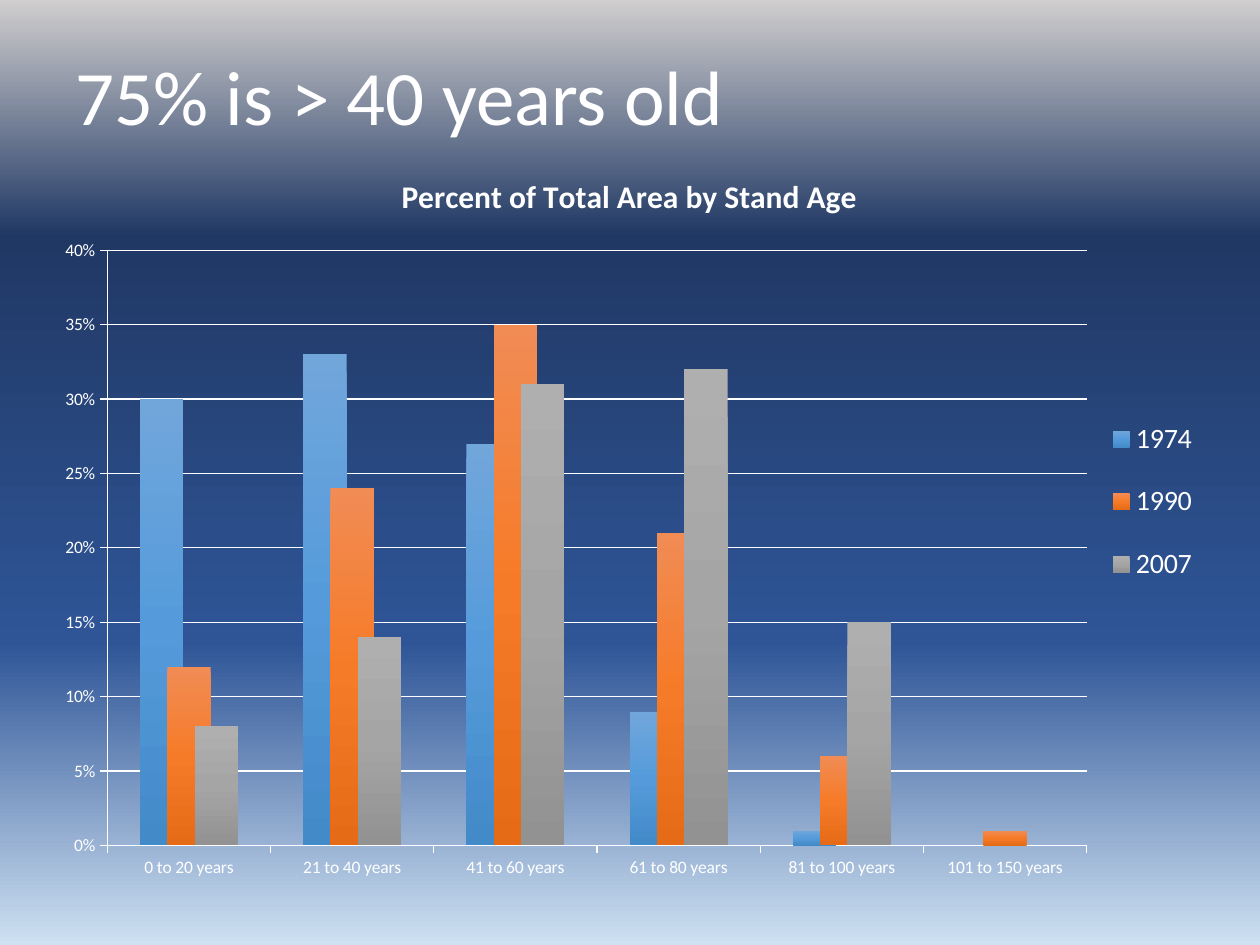
import pptx
import pptx.util
import pptx.chart.data
import pptx.dml.color
import pptx.enum.chart
import pptx.enum.text
from pptx.oxml.ns import qn
from lxml import etree

Inches, Pt = pptx.util.Inches, pptx.util.Pt
FONT = "Calibri"
HEX = {"white": "FFFFFF"}
SKY = [(0, "D0CECE"), (25, "203864"), (68, "2F5597"), (100, "CEE1F2")]
AGES = ["0 to 20 years", "21 to 40 years", "41 to 60 years",
        "61 to 80 years", "81 to 100 years", "101 to 150 years"]
YEARS = {
    "1974": ([0.3, 0.33, 0.27, 0.09, 0.01, None],
             [(0, "71A6DB"), (50, "559BDB"), (100, "438AC9")]),
    "1990": ([0.12, 0.24, 0.35, 0.21, 0.06, 0.01],
             [(0, "F18C55"), (50, "F67B28"), (100, "E56B17")]),
    "2007": ([0.08, 0.14, 0.31, 0.32, 0.15, 0],
             [(0, "AFAFAF"), (50, "A5A5A5"), (100, "929292")]),
}


def style(font, size, bold=False, color="white"):
    font.name, font.size, font.bold = FONT, Pt(size), bold
    font.color.rgb = pptx.dml.color.RGBColor.from_string(HEX[color])


def put(frame, text, size, bold=False, align=None, space=None):
    par = frame.paragraphs[0]
    par.alignment, par.line_spacing = align, space
    run = par.add_run()
    run.text = text
    style(run.font, size, bold)


def grade(fill, root, stops):
    """Fill from top to bottom with (percent, hex) stops."""
    fill.gradient()
    fill.gradient_angle = 270
    group = next(root.iter(qn("a:gsLst")))
    for old in list(group):
        group.remove(old)
    for pos, color in stops:
        stop = etree.SubElement(group, qn("a:gs"), pos=str(pos * 1000))
        etree.SubElement(stop, qn("a:srgbClr"), val=color)


def lay(part, box, inner=False):
    """Place a chart part by fractions of the chart's size."""
    node = part.find(qn("c:layout"))
    if node is None:
        node = etree.Element(qn("c:layout"))
        if inner:
            part.insert(0, node)
        else:
            part.find(qn("c:legendPos")).addnext(node)
    for old in list(node):
        node.remove(old)
    manual = etree.SubElement(node, qn("c:manualLayout"))
    if inner:
        etree.SubElement(manual, qn("c:layoutTarget"), val="inner")
    for key in ("xMode", "yMode"):
        etree.SubElement(manual, qn("c:" + key), val="edge")
    for key, val in zip("xywh", box):
        etree.SubElement(manual, qn("c:" + key), val=str(val))


def rule(line):
    line.width = Pt(0.75)
    line.color.rgb = pptx.dml.color.RGBColor.from_string(HEX["white"])


def draw_axes(chart):
    for axis in (chart.category_axis, chart.value_axis):
        axis.major_tick_mark = pptx.enum.chart.XL_TICK_MARK.OUTSIDE
        axis.minor_tick_mark = pptx.enum.chart.XL_TICK_MARK.NONE
        rule(axis.format.line)
        style(axis.tick_labels.font, 10)
    chart.category_axis.has_major_gridlines = False
    axis = chart.value_axis
    axis.minimum_scale, axis.maximum_scale, axis.major_unit = 0, 0.4, 0.05
    axis.tick_labels.number_format = "0%"
    axis.tick_labels.number_format_is_linked = False
    axis.has_major_gridlines = True
    rule(axis.major_gridlines.format.line)


def draw_chart(slide, x, y, w, h):
    data = pptx.chart.data.CategoryChartData(number_format="0%")
    data.categories = AGES
    for year, (vals, _) in YEARS.items():
        data.add_series(year, vals)
    kind = pptx.enum.chart.XL_CHART_TYPE.COLUMN_CLUSTERED
    chart = slide.shapes.add_chart(kind, x, y, w, h, data).chart
    style(chart.font, 10)
    chart.has_title = True
    put(chart.chart_title.text_frame, "Percent of Total Area by Stand Age",
        18, bold=True)
    chart.chart_title.include_in_layout = False
    draw_axes(chart)

    plot = chart.plots[0]
    plot.gap_width, plot.overlap, plot.vary_by_categories = 150, 37, False
    for ser in plot.series:
        grade(ser.format.fill, ser._element, YEARS[ser.name][1])

    chart.has_legend = True
    legend = chart.legend
    legend.position = pptx.enum.chart.XL_LEGEND_POSITION.RIGHT
    legend.include_in_layout = False
    style(legend.font, 16)
    lay(legend._element, (0.9, 0.33, 0.09, 0.29))
    area = next(chart._chartSpace.iter(qn("c:plotArea")))
    lay(area, (0.056, 0.138, 0.833, 0.798), inner=True)


def draw_title(slide, x, y, w, h):
    title = slide.shapes.title
    title.left, title.top, title.width, title.height = x, y, w, h
    frame = title.text_frame
    frame.vertical_anchor = pptx.enum.text.MSO_ANCHOR.MIDDLE
    put(frame, "75% is > 40 years old", 44,
        align=pptx.enum.text.PP_ALIGN.LEFT, space=0.9)


def main():
    deck = pptx.Presentation()
    deck.slide_width, deck.slide_height = Inches(10), Inches(7.5)
    slide = deck.slides.add_slide(deck.slide_layouts[5])
    grade(slide.background.fill, slide._element, SKY)
    draw_chart(slide, Inches(0.33), Inches(1.17), Inches(9.33), Inches(5.92))
    draw_title(slide, Inches(0.5), Inches(0.17), Inches(9), Inches(1.25))
    deck.save("out.pptx")


if __name__ == "__main__":
    main()
